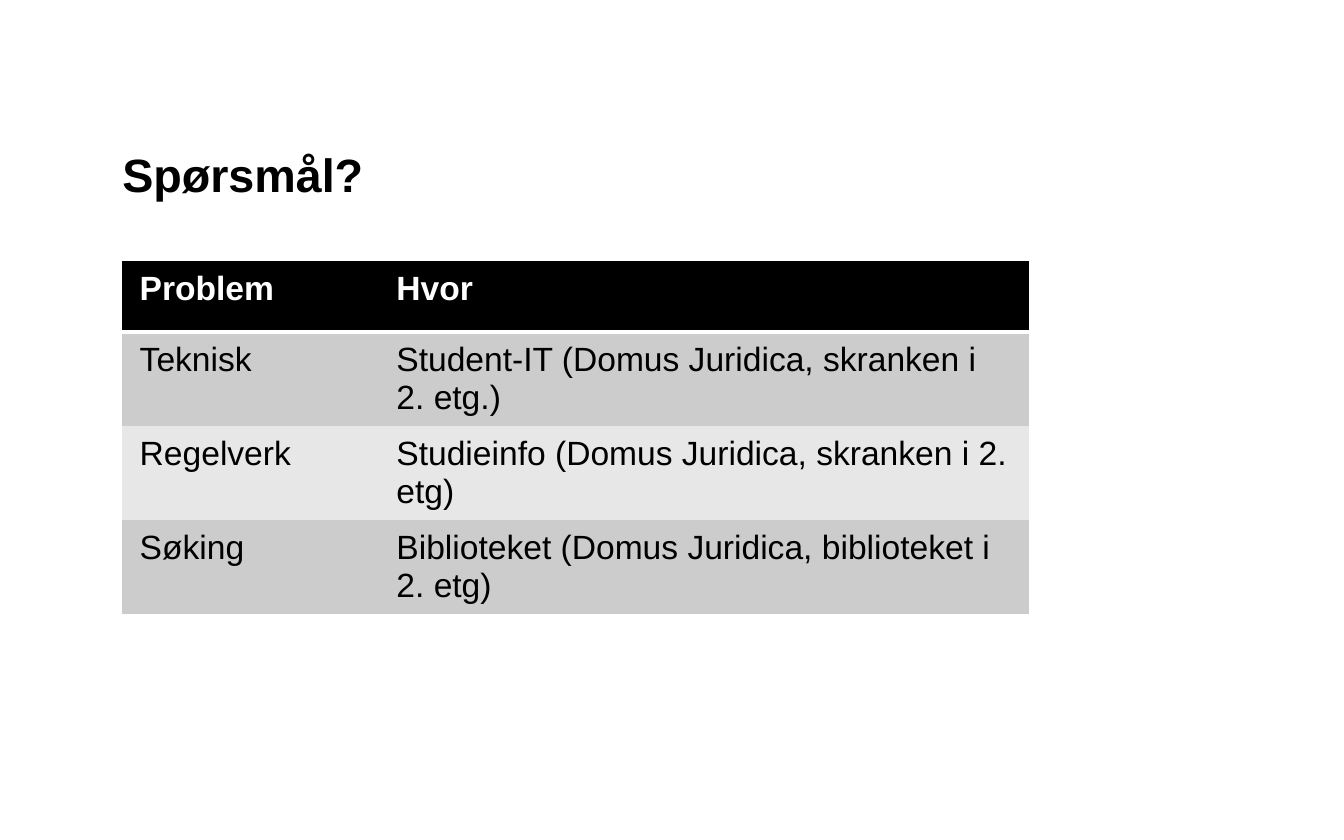
from dataclasses import dataclass

from lxml import etree
from pptx import Presentation
from pptx.dml.color import RGBColor
from pptx.enum.text import MSO_ANCHOR, PP_ALIGN
from pptx.oxml.ns import qn
from pptx.slide import Slide
from pptx.table import Table, _Cell
from pptx.text.text import TextFrame
from pptx.util import Inches, Pt

LEFT = PP_ALIGN.LEFT
MIDDLE = MSO_ANCHOR.MIDDLE
TOP = MSO_ANCHOR.TOP

FONT = "Arial"
PLAIN_TABLE_STYLE = "{2D5ABB26-0587-4C30-8999-92F81FD0307C}"
COLORS = {
    "black": "000000",
    "white": "FFFFFF",
    "dark_band": "CCCCCC",
    "light_band": "E7E7E7",
}
COLUMN_WIDTHS = (1.91, 4.84)
ROW_HEIGHT = 0.53
RULE_WIDTH = 2


@dataclass(frozen=True)
class HelpRow:
    problem: str
    place: str


HEADER = HelpRow("Problem", "Hvor")
HELP_ROWS = (
    HelpRow("Teknisk", "Student-IT (Domus Juridica, skranken i 2. etg.)"),
    HelpRow("Regelverk", "Studieinfo (Domus Juridica, skranken i 2. etg)"),
    HelpRow("Søking", "Biblioteket (Domus Juridica, biblioteket i 2. etg)"),
)


def write_text(frame: TextFrame, text: str, size: float, color: str, bold: bool) -> None:
    frame.word_wrap = True
    paragraph = frame.paragraphs[0]
    paragraph.alignment = LEFT
    run = paragraph.add_run()
    run.text = text
    run.font.name = FONT
    run.font.size = Pt(size)
    run.font.bold = bold
    run.font.color.rgb = RGBColor.from_string(COLORS[color])


def add_title(slide: Slide, text: str) -> None:
    title = slide.shapes.title
    title.left, title.top = Inches(0.83), Inches(0.77)
    title.width, title.height = Inches(8.66), Inches(1.04)
    frame = title.text_frame
    frame.margin_left = frame.margin_right = Inches(0.08)
    frame.margin_top = frame.margin_bottom = Inches(0.04)
    frame.vertical_anchor = MIDDLE
    write_text(frame, text, 25, "black", True)


def add_bottom_rule(cell: _Cell, color: str) -> None:
    """Draw the cell's bottom border, which must precede its fill in the XML."""
    line = etree.Element(qn("a:lnB"), w=str(Pt(RULE_WIDTH)))
    fill = etree.SubElement(line, qn("a:solidFill"))
    etree.SubElement(fill, qn("a:srgbClr"), val=COLORS[color])
    cell._tc.get_or_add_tcPr().insert(0, line)


def fill_row(table: Table, index: int, content: HelpRow,
             background: str, color: str, bold: bool) -> None:
    table.rows[index].height = Inches(ROW_HEIGHT)
    for cell, text in zip(table.rows[index].cells, (content.problem, content.place)):
        cell.margin_left = cell.margin_right = Inches(0.13)
        cell.margin_top = cell.margin_bottom = Inches(0.07)
        cell.vertical_anchor = TOP
        cell.fill.solid()
        cell.fill.fore_color.rgb = RGBColor.from_string(COLORS[background])
        write_text(cell.text_frame, text, 18, color, bold)


def add_help_table(slide: Slide) -> None:
    row_count = len(HELP_ROWS) + 1
    frame = slide.shapes.add_table(
        row_count, len(COLUMN_WIDTHS), Inches(0.91), Inches(1.94),
        Inches(sum(COLUMN_WIDTHS)), Inches(ROW_HEIGHT * row_count))
    table = frame.table
    table._tbl.tblPr.find(qn("a:tableStyleId")).text = PLAIN_TABLE_STYLE
    for column, width in zip(table.columns, COLUMN_WIDTHS):
        column.width = Inches(width)

    fill_row(table, 0, HEADER, "black", "white", True)
    for cell in table.rows[0].cells:
        add_bottom_rule(cell, "white")
    for index, help_row in enumerate(HELP_ROWS, start=1):
        band = "dark_band" if index % 2 else "light_band"
        fill_row(table, index, help_row, band, "black", False)


def main() -> None:
    presentation = Presentation()
    presentation.slide_width = Inches(10)
    presentation.slide_height = Inches(6.25)
    title_only = presentation.slide_layouts[5]
    slide = presentation.slides.add_slide(title_only)
    add_title(slide, "Spørsmål?")
    add_help_table(slide)
    presentation.save("out.pptx")


if __name__ == "__main__":
    main()
